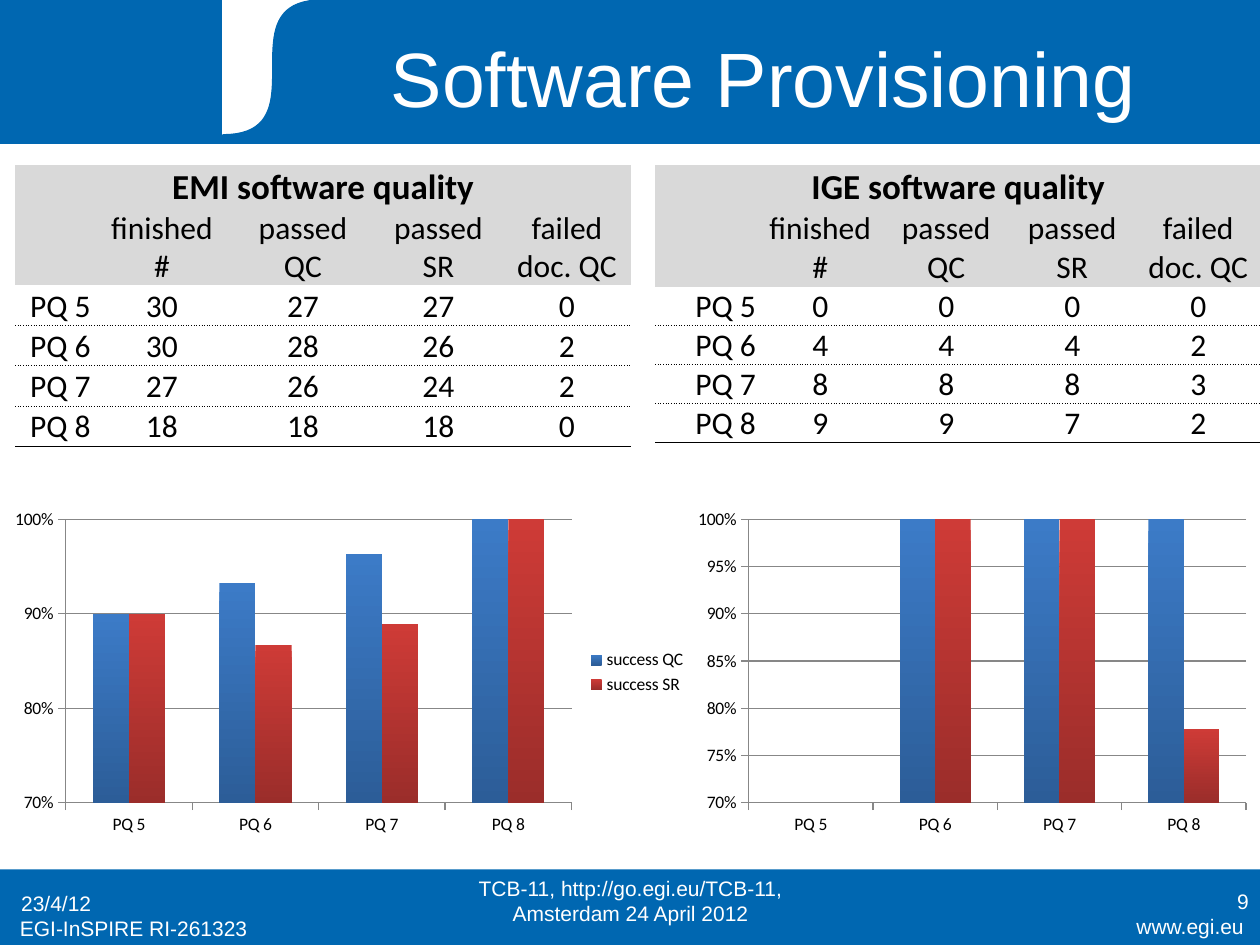
import pptx
import pptx.chart.data
import pptx.dml.color
import pptx.enum.chart
import pptx.enum.shapes
import pptx.enum.text
import pptx.oxml
import pptx.oxml.ns
import pptx.util
from dataclasses import dataclass

Inches = pptx.util.Inches
Pt = pptx.util.Pt
ALIGN = pptx.enum.text.PP_ALIGN
ANCHOR = pptx.enum.text.MSO_ANCHOR
NO_TABLE_STYLE = "{2D5ABB26-0587-4C30-8999-92F81FD0307C}"


def rgb(value):
    return pptx.dml.color.RGBColor.from_string(value)


@dataclass(frozen=True)
class Theme:
    blue: str = "0067B1"
    white: str = "FFFFFF"
    black: str = "000000"
    heading_grey: str = "D9D9D9"
    axis_grey: str = "878787"
    bars: tuple = (("3C7BC7", "2C5D98"), ("CE3B37", "9B2D2A"))
    banner_font: str = "Arial"
    data_font: str = "Calibri"
    title: int = 44
    footer: int = 12
    table_title: int = 20
    table_body: int = 18
    chart: int = 10


class SlideBuilder:
    def __init__(self, slide, theme):
        self.slide = slide
        self.theme = theme

    def paint(self, shape, color, outlined=True):
        shape.shadow.inherit = False
        shape.fill.solid()
        shape.fill.fore_color.rgb = rgb(color)
        if outlined:
            shape.line.color.rgb = rgb(color)
            shape.line.width = Pt(0.75)
        else:
            shape.line.fill.background()

    def rectangle(self, box, color, outlined=True):
        shape = self.slide.shapes.add_shape(
            pptx.enum.shapes.MSO_SHAPE.RECTANGLE, *map(Inches, box))
        self.paint(shape, color, outlined)

    def outline(self, points, color):
        corners = [(Inches(x), Inches(y)) for x, y in points]
        builder = self.slide.shapes.build_freeform(*corners[0])
        builder.add_line_segments(corners[1:], close=True)
        self.paint(builder.convert_to_shape(), color)

    def fill_paragraph(self, paragraph, text, size, font, color, align, bold=False):
        paragraph.alignment = align
        paragraph.font.size = Pt(size)
        if text:
            run = paragraph.add_run()
            run.text = text
            run.font.size = Pt(size)
            run.font.name = font
            run.font.bold = bold
            run.font.color.rgb = rgb(color)

    def text(self, box, text, size, align=ALIGN.LEFT, anchor=ANCHOR.MIDDLE):
        frame = self.slide.shapes.add_textbox(*map(Inches, box)).text_frame
        frame.word_wrap = True
        frame.vertical_anchor = anchor
        self.fill_paragraph(frame.paragraphs[0], text, size,
                            self.theme.banner_font, self.theme.white, align)

    def border(self, cell, side, dash):
        line = pptx.oxml.parse_xml(
            f'<a:{side} {pptx.oxml.ns.nsdecls("a")} w="6350"><a:solidFill>'
            f'<a:srgbClr val="{self.theme.black}"/></a:solidFill>'
            f'<a:prstDash val="{dash}"/></a:{side}>')
        cell._tc.get_or_add_tcPr().append(line)

    def cell(self, cell, lines, size, align, bold=False):
        cell.vertical_anchor = ANCHOR.BOTTOM
        cell.margin_left = cell.margin_right = cell.margin_top = Inches(0.01)
        cell.margin_bottom = 0
        frame = cell.text_frame
        for index, line in enumerate(lines.split("\n")):
            paragraph = frame.add_paragraph() if index else frame.paragraphs[0]
            self.fill_paragraph(paragraph, line, size, self.theme.data_font,
                                self.theme.black, align, bold)

    def table(self, box, title, headings, results, widths, heights):
        rows = [[title] + [""] * (len(widths) - 1)] + headings + results
        first_result = 1 + len(headings)
        table = self.slide.shapes.add_table(
            len(rows), len(widths), *map(Inches, box)).table
        table._tbl.tblPr.find(pptx.oxml.ns.qn("a:tableStyleId")).text = NO_TABLE_STYLE
        table.first_row = table.horz_banding = False
        for column, width in zip(table.columns, widths):
            column.width = Inches(width)
        for row, height in zip(table.rows, heights):
            row.height = Inches(height)
        table.cell(0, 0).merge(table.cell(0, len(widths) - 1))
        for r, values in enumerate(rows):
            size = self.theme.table_body if r else self.theme.table_title
            for c, value in enumerate(values):
                cell = table.cell(r, c)
                is_label = c == 0 and r >= first_result
                self.cell(cell, str(value), size,
                          ALIGN.RIGHT if is_label else ALIGN.CENTER, r == 0)
                if r < first_result:
                    cell.fill.solid()
                    cell.fill.fore_color.rgb = rgb(self.theme.heading_grey)
                    continue
                if r > first_result:
                    self.border(cell, "lnT", "sysDot")
                self.border(cell, "lnB", "solid" if r == len(rows) - 1 else "sysDot")
                cell.fill.background()

    def chart(self, box, categories, series, major_unit, legend=False):
        data = pptx.chart.data.CategoryChartData(number_format="0%")
        data.categories = categories
        for name, values in series.items():
            data.add_series(name, values)
        chart = self.slide.shapes.add_chart(
            pptx.enum.chart.XL_CHART_TYPE.COLUMN_CLUSTERED,
            *map(Inches, box), data).chart
        chart.has_title = False
        chart.font.size = Pt(self.theme.chart)
        chart.font.name = self.theme.data_font
        chart.font.color.rgb = rgb(self.theme.black)
        chart.has_legend = legend
        if legend:
            chart.legend.position = pptx.enum.chart.XL_LEGEND_POSITION.RIGHT
            chart.legend.include_in_layout = False
        scale = chart.value_axis
        scale.minimum_scale, scale.maximum_scale = 0.7, 1
        scale.major_unit = major_unit
        scale.tick_labels.number_format = "0%"
        scale.tick_labels.number_format_is_linked = False
        scale.has_major_gridlines = True
        for part in (scale, chart.category_axis, scale.major_gridlines):
            part.format.line.color.rgb = rgb(self.theme.axis_grey)
            part.format.line.width = Pt(0.75)
        for axis in (scale, chart.category_axis):
            axis.major_tick_mark = pptx.enum.chart.XL_TICK_MARK.OUTSIDE
        plot = chart.plots[0]
        plot.gap_width, plot.overlap = 150, 0
        plot.vary_by_categories = False
        for bars, shades in zip(plot.series, self.theme.bars):
            bars.format.fill.gradient()
            bars.format.fill.gradient_angle = 270
            for stop, shade in zip(bars.format.fill.gradient_stops, shades):
                stop.color.rgb = rgb(shade)


def bezier(start, pull_start, pull_end, end, steps=40):
    for t in (step / steps for step in range(steps + 1)):
        u = 1 - t
        yield tuple(u**3 * a + 3 * u * u * t * b + 3 * u * t * t * c + t**3 * d
                    for a, b, c, d in zip(start, pull_start, pull_end, end))


def main():
    deck = pptx.Presentation()
    deck.slide_width, deck.slide_height = Inches(10), Inches(7.5)
    theme = Theme()
    page = SlideBuilder(deck.slides.add_slide(deck.slide_layouts[6]), theme)

    page.rectangle((0, 6.9, 10, 0.6), theme.blue, outlined=False)
    page.rectangle((0, 0, 10, 1.14), theme.blue)
    page.rectangle((1.77, 0, 1.97, 1.07), theme.white)
    swoosh = bezier((1.77, 1.07), (2.56, 1.07), (1.77, 0), (2.56, 0))
    page.outline([(3.74, 0), (3.74, 1.07), *swoosh], theme.blue)

    page.text((8.39, 7.2, 1.58, 0.31), "www.egi.eu", theme.footer, ALIGN.RIGHT, ANCHOR.TOP)
    page.text((0.06, 7.22, 2.5, 0.31), "EGI-InSPIRE RI-261323", theme.footer, anchor=ANCHOR.TOP)
    page.text((2.32, 0.13, 7.48, 0.95), "Software Provisioning", theme.title, ALIGN.CENTER)
    page.text((0.07, 6.97, 2.33, 0.4), "23/4/12", theme.footer)
    page.text((3.42, 6.95, 3.17, 0.4),
              "TCB-11, http://go.egi.eu/TCB-11, Amsterdam 24 April 2012",
              theme.footer, ALIGN.CENTER)
    page.text((7.68, 6.95, 2.33, 0.4), "9", theme.footer, ALIGN.RIGHT)

    quarters = ["PQ 5", "PQ 6", "PQ 7", "PQ 8"]
    measures = ["", "finished", "passed", "passed", "failed"]
    units = ["", "#", "QC", "SR", "doc. QC"]
    stacked = [""] + [f"{m}\n{u}" for m, u in zip(measures[1:], units[1:])]
    emi = [(30, 27, 27, 0), (30, 28, 26, 2), (27, 26, 24, 2), (18, 18, 18, 0)]
    ige = [(0, 0, 0, 0), (4, 4, 4, 2), (8, 8, 8, 3), (9, 9, 7, 2)]

    page.table((0.12, 1.31, 4.88, 2.22), "EMI software quality", [stacked],
               [[q, *row] for q, row in zip(quarters, emi)],
               [0.61, 1.11, 1.13, 1.02, 1.02], [0.34, 0.6] + [0.32] * 4)
    page.chart((0.01, 3.99, 5.54, 2.69), quarters,
               {"success QC": (0.9, 0.933, 0.963, 1),
                "success SR": (0.9, 0.867, 0.889, 1)}, 0.1, legend=True)
    page.table((5.2, 1.31, 4.8, 2.23), "IGE software quality", [measures, units],
               [[q, *row] for q, row in zip(quarters, ige)],
               [0.81] + [1] * 4, [0.34] + [0.31] * 6)
    page.chart((5.45, 3.99, 4.53, 2.69), quarters,
               {"success QC": (0, 1, 1, 1),
                "success SR": (0, 1, 1, 0.778)}, 0.05)
    deck.save("out.pptx")


if __name__ == "__main__":
    main()
